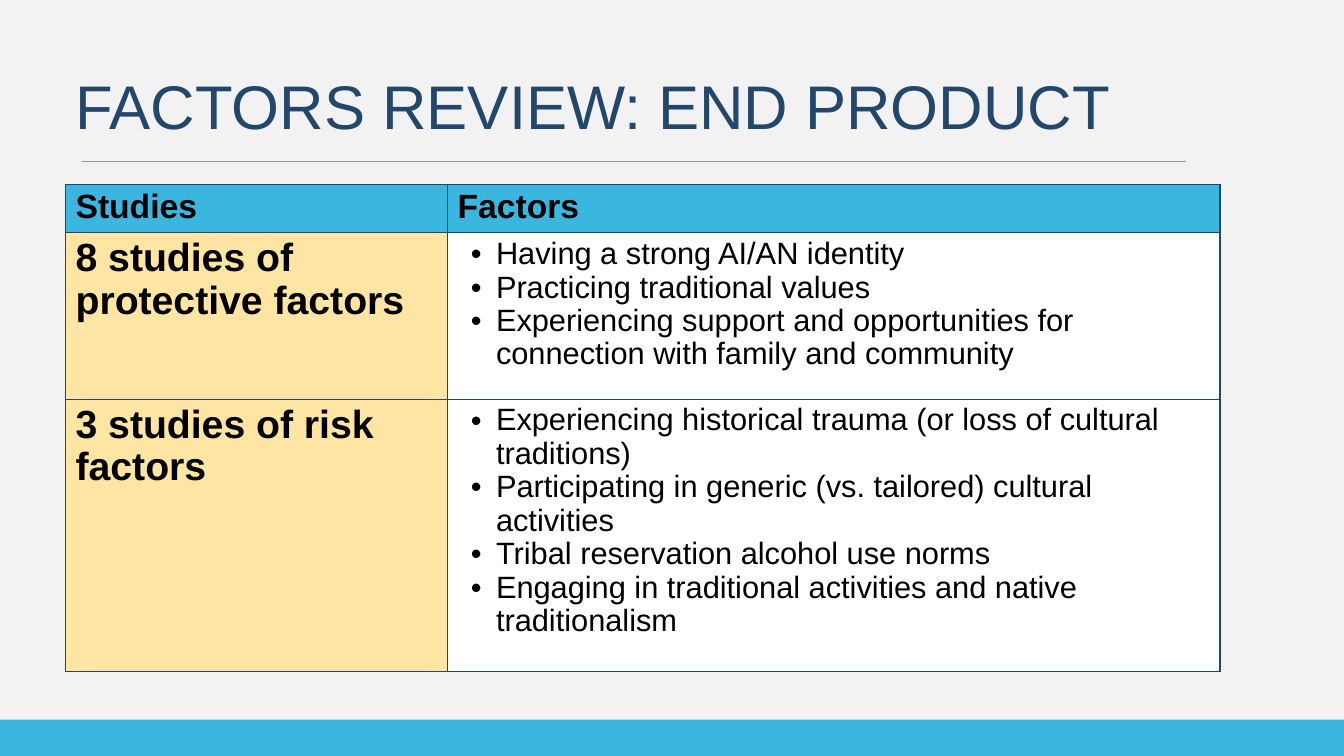
from lxml.etree import SubElement
from pptx import Presentation
from pptx.dml.color import RGBColor
from pptx.enum.shapes import MSO_CONNECTOR, MSO_SHAPE
from pptx.enum.text import MSO_ANCHOR, MSO_AUTO_SIZE, PP_ALIGN
from pptx.oxml.ns import qn
from pptx.util import Inches, Pt

TITLE = "FACTORS REVIEW: END PRODUCT"
HEADERS = ("Studies", "Factors")
STUDIES = [
    ("8 studies of protective factors", [
        "Having a strong AI/AN identity",
        "Practicing traditional values",
        "Experiencing support and opportunities for connection with family and community",
    ]),
    ("3 studies of risk factors", [
        "Experiencing historical trauma (or loss of cultural traditions)",
        "Participating in generic (vs. tailored) cultural activities",
        "Tribal reservation alcohol use norms",
        "Engaging in traditional activities and native traditionalism",
    ]),
]
COLORS = {"background": "F2F2F2", "band": "3AB6DF", "navy": "23466B", "rule": "939598",
          "study": "FFE5A3", "white": "FFFFFF", "black": "000000"}
FONT = "Arial"
LEFT, WIDTH = 0.65, 11.45
COLUMN_WIDTHS = (3.79, 7.66)
ROW_HEIGHTS = (0.48, 1.65, 2.7)
BAND_TOP, BAND_HEIGHT = 7.14, 0.36


def color(name):
    return RGBColor.from_string(COLORS[name])


def add_text(paragraph, text, size, bold=False, ink="black"):
    run = paragraph.add_run()
    run.text = text
    run.font.name = FONT
    run.font.size = Pt(size)
    run.font.bold = bold
    run.font.color.rgb = color(ink)


def set_borders(cell):
    properties = cell._tc.get_or_add_tcPr()
    for index, side in enumerate(("lnL", "lnR", "lnT", "lnB")):
        line = properties.makeelement(qn(f"a:{side}"), {"w": str(Pt(1))})
        fill = SubElement(line, qn("a:solidFill"))
        SubElement(fill, qn("a:srgbClr"), val=COLORS["navy"])
        properties.insert(index, line)


def fill_cell(cell, texts, size, fill, bold=False, bullets=False):
    cell.fill.solid()
    cell.fill.fore_color.rgb = color(fill)
    set_borders(cell)
    frame = cell.text_frame
    for index, text in enumerate(texts):
        paragraph = frame.add_paragraph() if index else frame.paragraphs[0]
        if bullets:
            properties = paragraph._p.get_or_add_pPr()
            properties.set("marL", str(Inches(0.38)))
            properties.set("indent", str(Inches(-0.25)))
            SubElement(properties, qn("a:buFont"), typeface=FONT)
            SubElement(properties, qn("a:buChar"), char="•")
        paragraph.line_spacing = 0.97
        add_text(paragraph, text, size, bold)


def add_title(slide):
    title = slide.shapes.title
    title.left, title.top = Inches(LEFT), Inches(0.36)
    title.width, title.height = Inches(WIDTH), Inches(1.25)
    frame = title.text_frame
    frame.auto_size = MSO_AUTO_SIZE.NONE
    frame.vertical_anchor = MSO_ANCHOR.MIDDLE
    frame.margin_top = Inches(0.17)
    paragraph = frame.paragraphs[0]
    paragraph.alignment = PP_ALIGN.LEFT
    add_text(paragraph, TITLE, 44, ink="navy")


def add_decoration(slide, slide_width):
    band = slide.shapes.add_shape(MSO_SHAPE.RECTANGLE, 0, Inches(BAND_TOP),
                                  slide_width, Inches(BAND_HEIGHT))
    band.shadow.inherit = False
    band.fill.solid()
    band.fill.fore_color.rgb = color("band")
    band.line.fill.background()
    rule = slide.shapes.add_connector(MSO_CONNECTOR.STRAIGHT, Inches(0.81), Inches(1.6),
                                      Inches(11.76), Inches(1.6))
    rule.line.color.rgb = color("rule")
    rule.line.width = Pt(0.5)
    SubElement(rule._element.spPr, qn("a:effectLst"))


def add_factors_table(slide):
    table = slide.shapes.add_table(len(ROW_HEIGHTS), len(COLUMN_WIDTHS), Inches(LEFT),
                                   Inches(1.83), Inches(WIDTH),
                                   Inches(sum(ROW_HEIGHTS))).table
    table.horz_banding = False
    for column, width in zip(table.columns, COLUMN_WIDTHS):
        column.width = Inches(width)
    for row, height in zip(table.rows, ROW_HEIGHTS):
        row.height = Inches(height)
    for column, header in enumerate(HEADERS):
        fill_cell(table.cell(0, column), [header], 24, "band", bold=True)
    for row, (study, factors) in enumerate(STUDIES, start=1):
        fill_cell(table.cell(row, 0), [study], 28, "study", bold=True)
        fill_cell(table.cell(row, 1), factors, 22, "white", bullets=True)


def main():
    presentation = Presentation()
    presentation.slide_width, presentation.slide_height = Inches(13.33), Inches(7.5)
    slide = presentation.slides.add_slide(presentation.slide_layouts[5])
    slide.background.fill.solid()
    slide.background.fill.fore_color.rgb = color("background")
    add_decoration(slide, presentation.slide_width)
    add_title(slide)
    add_factors_table(slide)
    presentation.save("out.pptx")


if __name__ == "__main__":
    main()
